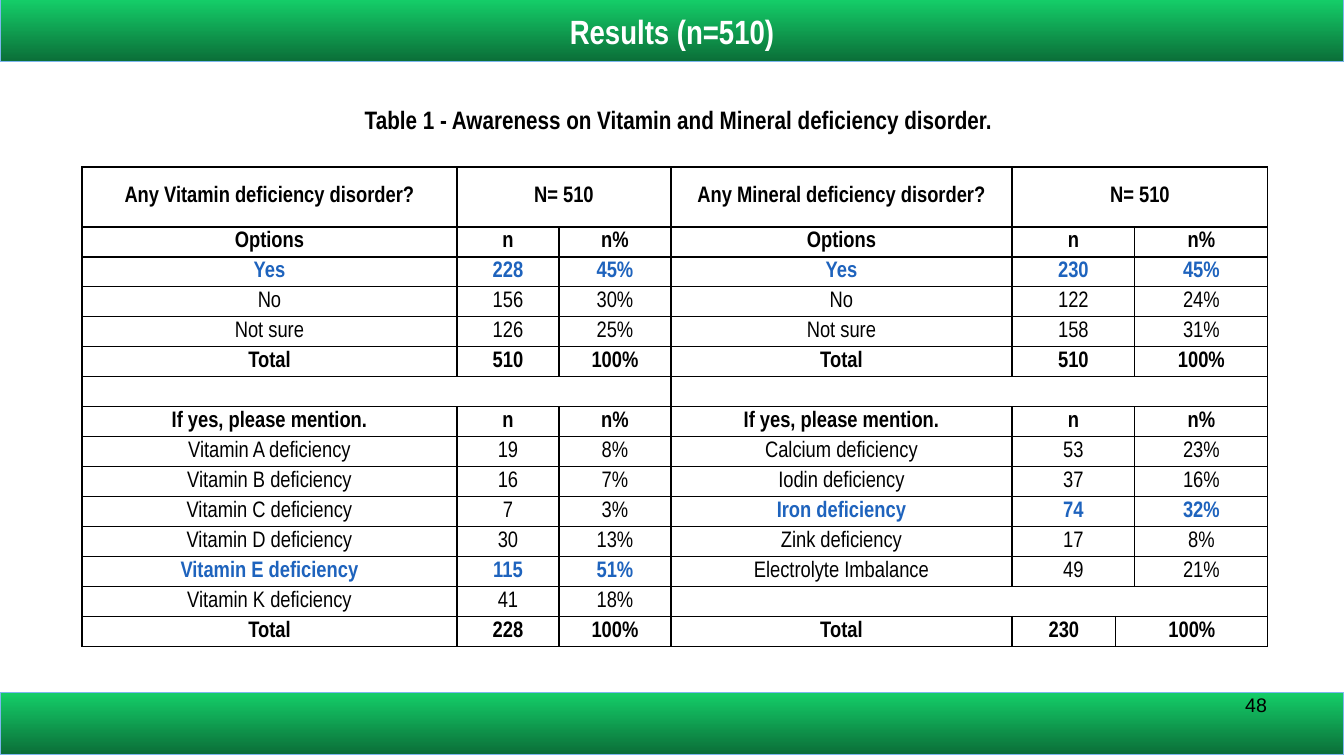
from lxml import etree
from pptx import Presentation, util as u
from pptx.dml.color import RGBColor
from pptx.enum import shapes, text
from pptx.oxml.ns import qn

PX = 914400 / 100.8
W, H = 1344, 756
NARROW = "Arial Narrow"
BLACK, WHITE, BLUE = "000000", "FFFFFF", "1E63BD"

COLUMNS = [375, 102, 112, 341, 104, 19, 133]
HEADER_H, ROW_H = 60, 30
HEADINGS = {"Options", "Total", "If yes, please mention."}
HIGHLIGHTS = {"Yes", "Iron deficiency", "Vitamin E deficiency"}

# Column spans by the number of cells in one half of a row
VITAMIN_SPANS = {1: [3], 2: [1, 2], 3: [1, 1, 1]}
MINERAL_SPANS = {1: [4], 2: [1, 3], 3: [1, 2, 1]}
LAST_MINERAL_SPANS = [1, 1, 2]

VITAMINS = [
    ["Any Vitamin deficiency disorder?", "N= 510"],
    ["Options", "n", "n%"],
    ["Yes", "228", "45%"],
    ["No", "156", "30%"],
    ["Not sure", "126", "25%"],
    ["Total", "510", "100%"],
    [""],
    ["If yes, please mention.", "n", "n%"],
    ["Vitamin A deficiency", "19", "8%"],
    ["Vitamin B deficiency", "16", "7%"],
    ["Vitamin C deficiency", "7", "3%"],
    ["Vitamin D deficiency", "30", "13%"],
    ["Vitamin E deficiency", "115", "51%"],
    ["Vitamin K deficiency", "41", "18%"],
    ["Total", "228", "100%"],
]
MINERALS = [
    ["Any Mineral deficiency disorder?", "N= 510"],
    ["Options", "n", "n%"],
    ["Yes", "230", "45%"],
    ["No", "122", "24%"],
    ["Not sure", "158", "31%"],
    ["Total", "510", "100%"],
    [""],
    ["If yes, please mention.", "n", "n%"],
    ["Calcium deficiency", "53", "23%"],
    ["Iodin deficiency", "37", "16%"],
    ["Iron deficiency", "74", "32%"],
    ["Zink deficiency", "17", "8%"],
    ["Electrolyte Imbalance", "49", "21%"],
    [""],
    ["Total", "230", "100%"],
]


def px(n):
    return u.Emu(round(n * PX))


def rgb(value):
    return RGBColor.from_string(value)


def write(tf, words, size, color=BLACK, bold=False, font=NARROW,
          align=text.PP_ALIGN.CENTER):
    p = tf.paragraphs[0]
    p.text = words
    p.alignment = align
    p.font.name, p.font.size, p.font.bold = font, u.Pt(size), bold
    p.font.color.rgb = rgb(color)
    if not words:
        etree.SubElement(p._p, qn("a:endParaRPr"), sz=str(size * 100))


def band(s, x, y, w, h, title=""):
    """Green gradient bar, with an optional title."""
    sp = s.shapes.add_shape(shapes.MSO_SHAPE.RECTANGLE, px(x), px(y), px(w), px(h))
    sp.shadow.inherit = False
    sp.fill.gradient()
    sp.fill.gradient_angle = 270
    for stop, color in zip(sp.fill.gradient_stops, ["14CD68", "0B6E38"]):
        stop.color.rgb = rgb(color)
    sp.line.color.rgb = rgb("7DB6EF")
    sp.line.width = u.Pt(0.75)
    if title:
        sp.text_frame.vertical_anchor = text.MSO_ANCHOR.MIDDLE
        write(sp.text_frame, title, 24, WHITE, True)


def label(s, x, y, w, h, words, size, **style):
    tf = s.shapes.add_textbox(px(x), px(y), px(w), px(h)).text_frame
    tf.word_wrap = True
    write(tf, words, size, **style)


def style_cell(cell):
    """Black borders, white fill and tight margins."""
    tc_pr = cell._tc.get_or_add_tcPr()
    for side in "LRTB":
        ln = etree.SubElement(tc_pr, qn("a:ln" + side), w=str(u.Pt(1)))
        fill = etree.SubElement(ln, qn("a:solidFill"))
        etree.SubElement(fill, qn("a:srgbClr"), val=BLACK)
    cell.fill.solid()
    cell.fill.fore_color.rgb = rgb(WHITE)
    cell.margin_left = cell.margin_right = px(5)
    cell.margin_top = cell.margin_bottom = 0
    cell.vertical_anchor = text.MSO_ANCHOR.MIDDLE


def fill_half_row(table, row, col, words, spans):
    bold = row == 0 or words[0] in HEADINGS | HIGHLIGHTS
    color = BLUE if words[0] in HIGHLIGHTS else BLACK
    for word, span in zip(words, spans):
        cell = table.cell(row, col)
        if span > 1:
            cell.merge(table.cell(row, col + span - 1))
        write(cell.text_frame, word, 16, color, bold)
        col += span


def awareness_table(s, x, y):
    rows = len(VITAMINS)
    heights = [HEADER_H] + [ROW_H] * (rows - 1)
    table = s.shapes.add_table(rows, len(COLUMNS), px(x), px(y),
                               px(sum(COLUMNS)), px(sum(heights))).table
    table.first_row = table.horz_banding = False
    for column, width in zip(table.columns, COLUMNS):
        column.width = px(width)
    for row, height in zip(table.rows, heights):
        row.height = px(height)
    for cell in table.iter_cells():
        style_cell(cell)
    for i, (vitamin, mineral) in enumerate(zip(VITAMINS, MINERALS)):
        last = i == rows - 1
        fill_half_row(table, i, 0, vitamin, VITAMIN_SPANS[len(vitamin)])
        fill_half_row(table, i, 3, mineral,
                      LAST_MINERAL_SPANS if last else MINERAL_SPANS[len(mineral)])


def results_slide(prs):
    s = prs.slides.add_slide(prs.slide_layouts[6])
    awareness_table(s, 82, 167)
    label(s, 264, 99, 829, 40,
          "Table 1 - Awareness on Vitamin and Mineral deficiency disorder.",
          18, bold=True)
    band(s, 0, 0, W, 62, "Results (n=510)")
    band(s, 0, 693, W, 62)
    label(s, 964, 688, 313, 52, "48", 14, font="Arial", align=text.PP_ALIGN.RIGHT)


def main():
    prs = Presentation()
    prs.slide_width, prs.slide_height = px(W), px(H)
    results_slide(prs)
    prs.save("out.pptx")


if __name__ == "__main__":
    main()
